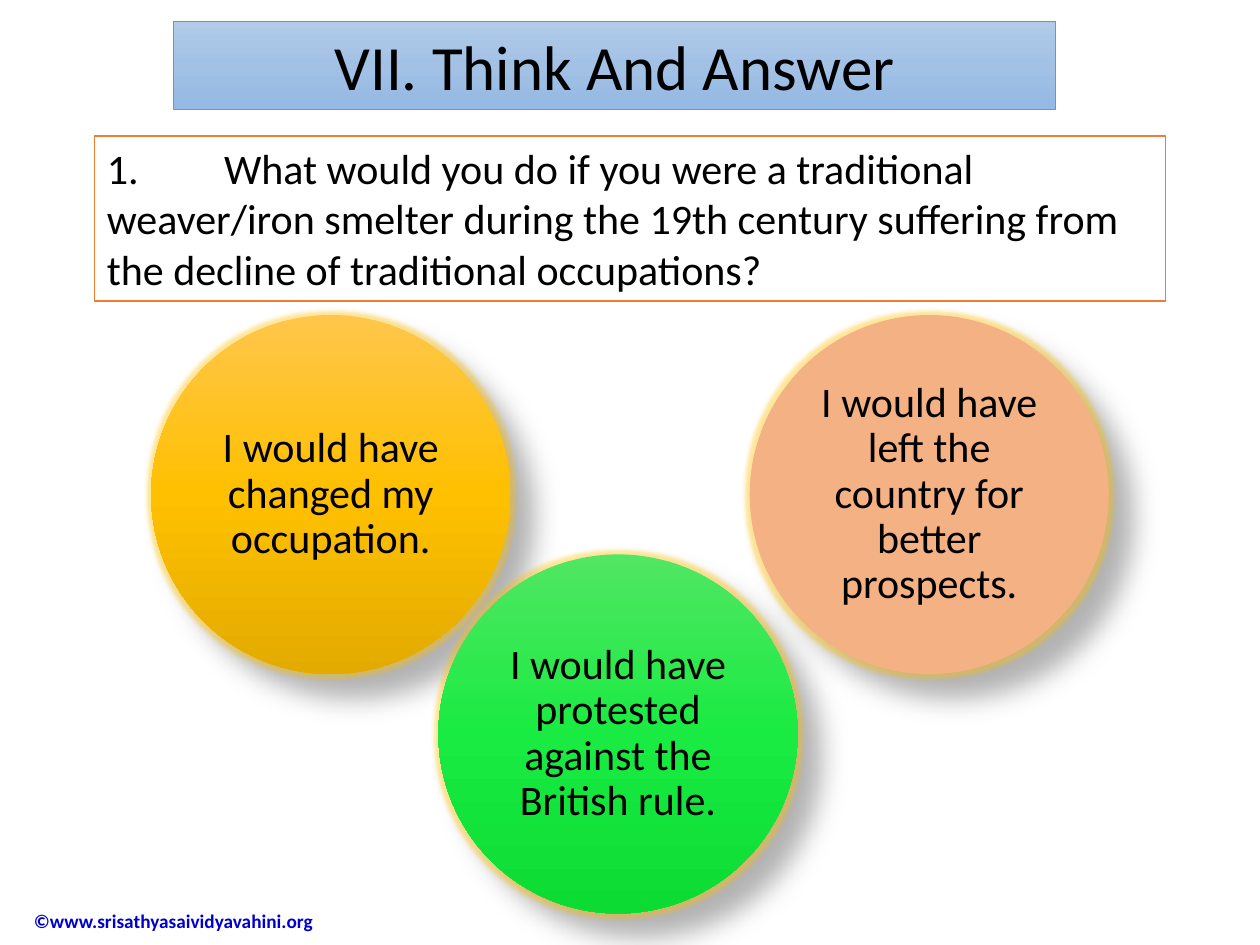
from copy import deepcopy
from dataclasses import dataclass

from lxml.etree import SubElement
from pptx import Presentation
from pptx.dml.color import RGBColor
from pptx.enum.shapes import MSO_SHAPE as Preset
from pptx.enum.text import MSO_ANCHOR as Anchor, PP_ALIGN as Align
from pptx.oxml.ns import qn
from pptx.util import Inches, Pt

FONT = "Calibri"
BLACK = RGBColor(0x00, 0x00, 0x00)
WHITE = RGBColor(0xFF, 0xFF, 0xFF)
LINK_BLUE = RGBColor(0x00, 0x00, 0xCC)
ORANGE = RGBColor(0xED, 0x7D, 0x31)
BLUE = RGBColor(0x5B, 0x9B, 0xD5)
PEACH = RGBColor(0xF4, 0xB1, 0x83)
BLUES = (RGBColor(0xB1, 0xCB, 0xE9), RGBColor(0xA3, 0xC1, 0xE5), RGBColor(0x93, 0xB9, 0xE4))
GOLDS = (RGBColor(0xFF, 0xC6, 0x4B), RGBColor(0xFF, 0xC0, 0x00), RGBColor(0xE3, 0xAB, 0x00))
GREENS = (RGBColor(0x51, 0xE6, 0x63), RGBColor(0x19, 0xEB, 0x42), RGBColor(0x0C, 0xDB, 0x34))
DIAMETER = 2.85


@dataclass
class Answer:
    text: str
    left: float
    top: float
    colors: tuple[RGBColor, ...]


ANSWERS = [
    Answer("I would have changed my occupation.", 1.2, 2.5, GOLDS),
    Answer("I would have protested against the British rule.", 3.48, 4.4, GREENS),
    Answer("I would have left the country for better prospects.", 5.95, 2.5, (PEACH,)),
]


def paint(shape, colors: tuple[RGBColor, ...]) -> None:
    """Fill with one solid colour, or with an even top-to-bottom gradient."""
    if len(colors) == 1:
        shape.fill.solid()
        shape.fill.fore_color.rgb = colors[0]
        return
    shape.fill.gradient()
    shape.fill.gradient_angle = 270
    stop_list = next(shape._element.iter(qn("a:gsLst")))
    while len(stop_list) < len(colors):
        stop_list.append(deepcopy(stop_list[-1]))
    for index, (stop, color) in enumerate(zip(shape.fill.gradient_stops, colors)):
        stop.position = index / (len(colors) - 1)
        stop.color.rgb = color


def add_effect(shape, tag: str, color: RGBColor, opacity: int, **settings: str) -> None:
    effects = shape._element.spPr.find(qn("a:effectLst"))
    effect = SubElement(effects, qn(tag), settings)
    color_node = SubElement(effect, qn("a:srgbClr"), val=str(color))
    SubElement(color_node, qn("a:alpha"), val=str(opacity * 1000))


def write(shape, text: str, size: float, align: Align, anchor: Anchor,
          color: RGBColor = BLACK, bold: bool = False):
    frame = shape.text_frame
    frame.word_wrap = True
    frame.vertical_anchor = anchor
    para = frame.paragraphs[0]
    para.text = text
    para.alignment = align
    for span in para.runs:
        span.font.name = FONT
        span.font.size = Pt(size)
        span.font.bold = bold
        span.font.color.rgb = color
    return para


def add_shape(page, preset: Preset, left: float, top: float, width: float, height: float,
              colors: tuple[RGBColor, ...]):
    shape = page.shapes.add_shape(preset, Inches(left), Inches(top), Inches(width), Inches(height))
    shape.shadow.inherit = False
    paint(shape, colors)
    shape.line.fill.background()
    return shape


def outline(shape, color: RGBColor, width: float) -> None:
    shape.line.color.rgb = color
    shape.line.width = Pt(width)


def add_answer(page, answer: Answer) -> None:
    circle = add_shape(page, Preset.OVAL, answer.left, answer.top, DIAMETER, DIAMETER, answer.colors)
    add_effect(circle, "a:glow", GOLDS[1], 40, rad=str(Pt(5)))
    add_effect(circle, "a:outerShdw", BLACK, 30, blurRad=str(Pt(15)), dist=str(Pt(18)),
               dir=str(45 * 60000), algn="ctr", rotWithShape="0")
    frame = circle.text_frame
    frame.margin_left = frame.margin_right = frame.margin_top = frame.margin_bottom = Inches(0.1)
    para = write(circle, answer.text, 24, Align.CENTER, Anchor.MIDDLE)
    para.line_spacing = 0.9


def add_question(page) -> None:
    box = add_shape(page, Preset.RECTANGLE, 0.75, 1.08, 8.5, 1.31, (WHITE,))
    outline(box, ORANGE, 1)
    para = write(box, "1.\tWhat would you do if you were a traditional weaver/iron smelter during "
                 "the 19th century suffering from the decline of traditional occupations?",
                 24, Align.LEFT, Anchor.TOP)
    tabs = SubElement(para._p.get_or_add_pPr(), qn("a:tabLst"))
    SubElement(tabs, qn("a:tab"), pos=str(Inches(0.93)), algn="l")


def main() -> None:
    deck = Presentation()
    deck.slide_width, deck.slide_height = Inches(10), Inches(7.5)
    page = deck.slides.add_slide(deck.slide_layouts[6])

    credit = page.shapes.add_textbox(Inches(0.17), Inches(7.1), Inches(2.52), Inches(0.41))
    write(credit, "©www.srisathyasaividyavahini.org", 11, Align.LEFT, Anchor.MIDDLE, LINK_BLUE, True)

    add_question(page)
    title = add_shape(page, Preset.RECTANGLE, 1.38, 0.17, 7, 0.7, BLUES)
    outline(title, BLUE, 0.5)
    write(title, "VII. Think And Answer", 36, Align.CENTER, Anchor.TOP)

    for answer in ANSWERS:
        add_answer(page, answer)
    deck.save("out.pptx")


if __name__ == "__main__":
    main()
